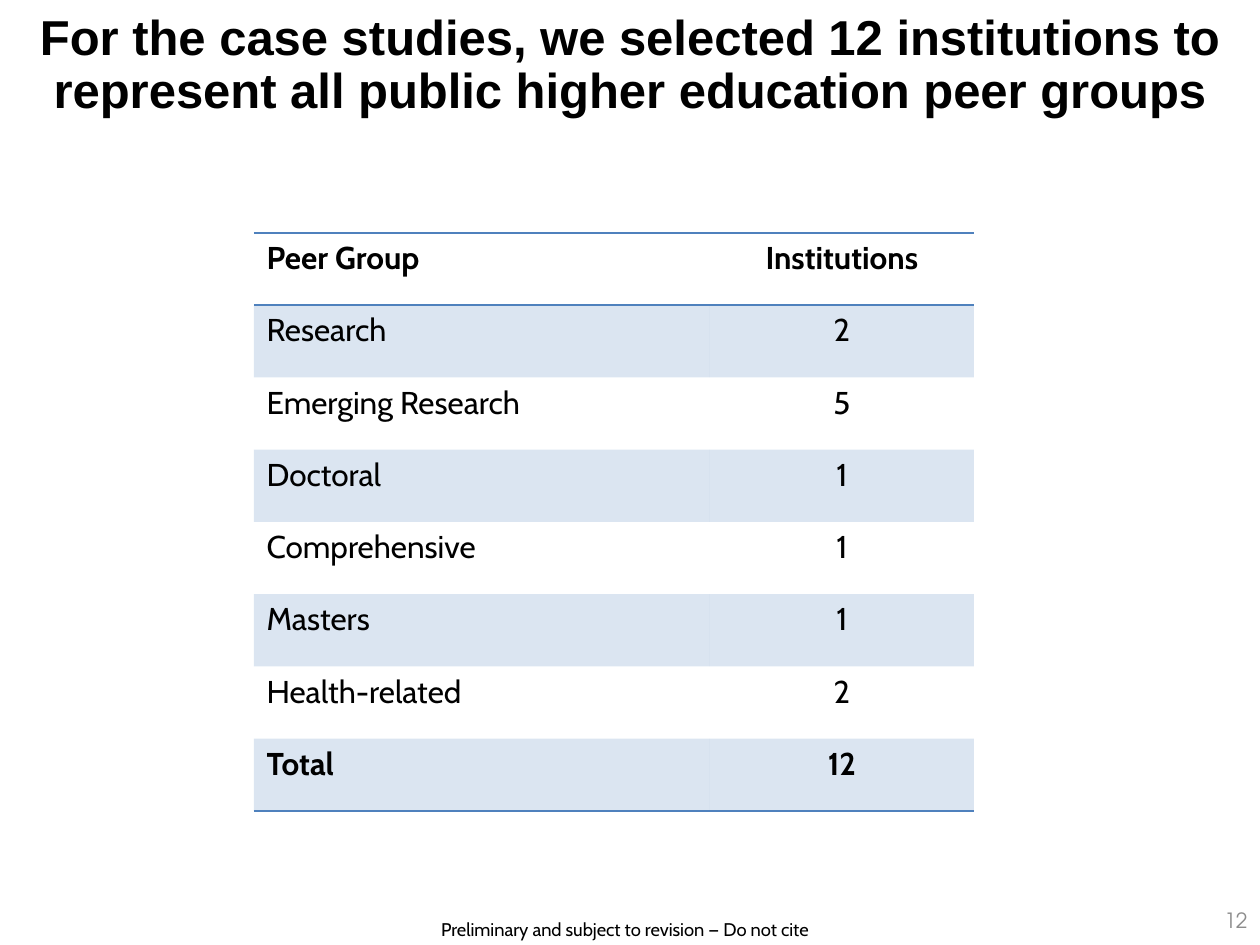
from dataclasses import dataclass

from lxml.etree import SubElement
from pptx import Presentation
from pptx.dml.color import RGBColor
from pptx.enum.text import MSO_ANCHOR as Anchor, PP_ALIGN as Align
from pptx.oxml import parse_xml
from pptx.oxml.ns import nsdecls, qn
from pptx.util import Emu, Pt

PX_PER_INCH = 126


@dataclass(frozen=True)
class Theme:
    ink: str = "000000"
    muted: str = "8C8C8C"
    accent: str = "4F81BD"
    band_alpha: int = 20
    rule_pt: int = 1
    title_font: str = "Arial"
    body_font: str = "Cabin"
    number_font: str = "TeX Gyre Adventor"
    title_size: float = 28
    table_size: float = 18
    number_size: float = 12
    footer_size: float = 10.5
    plain_table: str = "{2D5ABB26-0587-4C30-8999-92F81FD0307C}"


def px(length):
    return Emu(round(length * 914400 / PX_PER_INCH))


class SlideBuilder:
    def __init__(self, slide, theme):
        self.slide = slide
        self.theme = theme

    def fill_frame(self, frame, words, font, size, color=None, bold=False,
                   align=Align.LEFT, spacing=None):
        """Put one styled paragraph into a text frame."""
        paragraph = frame.paragraphs[0]
        paragraph.alignment = align
        paragraph.line_spacing = spacing
        run = paragraph.add_run()
        run.text = words
        for name, value in {"name": font, "size": Pt(size), "bold": bold}.items():
            setattr(run.font, name, value)
        run.font.color.rgb = RGBColor.from_string(color or self.theme.ink)

    def text(self, box, words, font, size, frame_format=None, **style):
        frame = self.slide.shapes.add_textbox(*map(px, box)).text_frame
        frame.word_wrap = True
        for name, value in (frame_format or {}).items():
            setattr(frame, name, value)
        self.fill_frame(frame, words, font, size, **style)

    def rule(self, cell, side):
        """Draw a cell border, lnT before lnB and both before the fill."""
        cell._tc.get_or_add_tcPr().append(parse_xml(
            f'<a:{side} {nsdecls("a")} w="{Pt(self.theme.rule_pt)}"><a:solidFill>'
            f'<a:srgbClr val="{self.theme.accent}"/></a:solidFill></a:{side}>'))

    def band(self, cell):
        cell.fill.solid()
        cell.fill.fore_color.rgb = RGBColor.from_string(self.theme.accent)
        color = cell._tc.tcPr.find(f"{qn('a:solidFill')}/{qn('a:srgbClr')}")
        SubElement(color, qn("a:alpha"), val=str(self.theme.band_alpha * 1000))

    def table(self, box, widths, rows):
        """Banded table with a bold first and last row between ruled lines."""
        theme = self.theme
        table = self.slide.shapes.add_table(len(rows), len(widths), *map(px, box)).table
        table.first_row = table.horz_banding = False
        table._tbl.tblPr.find(qn("a:tableStyleId")).text = theme.plain_table
        for column, width in zip(table.columns, widths):
            column.width = px(width)
        last = len(rows) - 1
        sides = {0: ("lnT", "lnB"), last: ("lnB",)}
        for r, row in enumerate(rows):
            for c, words in enumerate(row):
                cell = table.cell(r, c)
                self.fill_frame(cell.text_frame, words, theme.body_font,
                                theme.table_size, bold=r in sides,
                                align=Align.CENTER if c else Align.LEFT)
                for side in sides.get(r, ()):
                    self.rule(cell, side)
                if r % 2:
                    self.band(cell)
                else:
                    cell.fill.background()


PEER_GROUPS = [
    ("Peer Group", "Institutions"),
    ("Research", "2"),
    ("Emerging Research", "5"),
    ("Doctoral", "1"),
    ("Comprehensive", "1"),
    ("Masters", "1"),
    ("Health-related", "2"),
    ("Total", "12"),
]


def main():
    deck = Presentation()
    deck.slide_width, deck.slide_height = px(1260), px(945)
    theme = Theme()
    page = SlideBuilder(deck.slides.add_slide(deck.slide_layouts[6]), theme)

    page.text((249, 912, 752, 35), "Preliminary and subject to revision — Do not cite",
              theme.body_font, theme.footer_size, align=Align.CENTER)
    title_insets = {"margin_left": px(25), "margin_top": px(13),
                    "margin_right": px(25), "margin_bottom": px(25)}
    page.text((0, 0, 1260, 125),
              "For the case studies, we selected 12 institutions to represent "
              "all public higher education peer groups",
              theme.title_font, theme.title_size, title_insets,
              bold=True, align=Align.CENTER, spacing=0.9)
    page.text((966, 895, 294, 50), "12", theme.number_font, theme.number_size,
              {"vertical_anchor": Anchor.MIDDLE}, color=theme.muted, align=Align.RIGHT)
    page.table((254, 233, 720, 578), (456, 264), PEER_GROUPS)

    deck.save("out.pptx")


if __name__ == "__main__":
    main()
